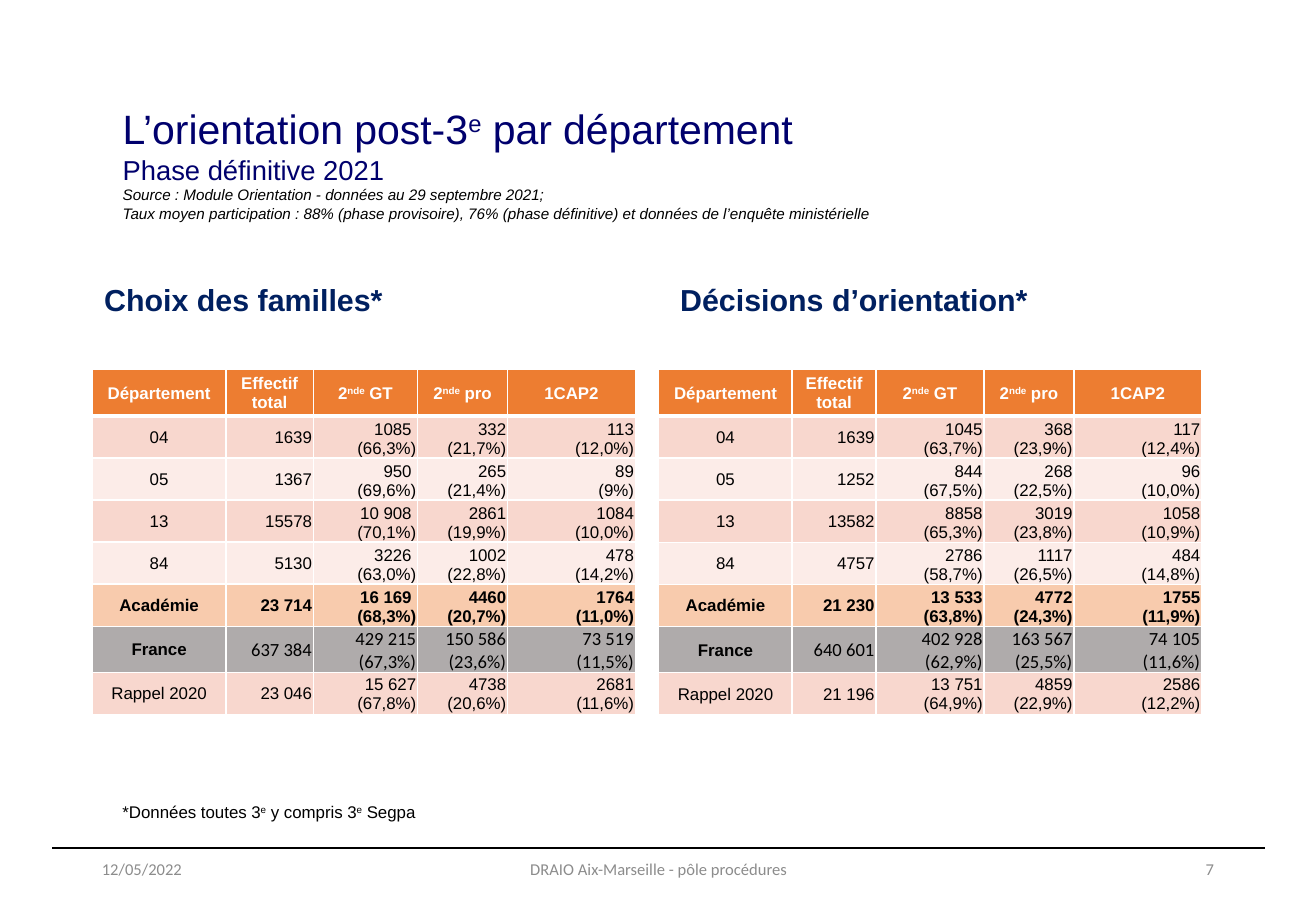
from copy import deepcopy
from lxml.etree import SubElement
from pptx import Presentation
from pptx.dml.color import RGBColor
from pptx.enum.shapes import MSO_CONNECTOR
from pptx.enum.text import MSO_ANCHOR, MSO_AUTO_SIZE, PP_ALIGN
from pptx.oxml.ns import qn
from pptx.util import Cm, Pt

NAVY = RGBColor(0x00, 0x00, 0x6D)
HEADING_BLUE = RGBColor(0x00, 0x20, 0x60)
BLACK = RGBColor(0x00, 0x00, 0x00)
WHITE = RGBColor(0xFF, 0xFF, 0xFF)
FOOTER_GREY = RGBColor(0x8C, 0x8C, 0x8C)
ORANGE = RGBColor(0xED, 0x7D, 0x31)
PINK = RGBColor(0xF8, 0xD7, 0xCE)
PALE_PINK = RGBColor(0xFC, 0xEC, 0xE8)
PEACH = RGBColor(0xF8, 0xCB, 0xAD)
GREY = RGBColor(0xAF, 0xAB, 0xAB)

ROW_FILLS = [ORANGE, PINK, PALE_PINK, PINK, PALE_PINK, PEACH, GREY, PINK]
HEADER_ROW, ACADEMY_ROW, FRANCE_ROW = 0, 5, 6
HEADER = ["Département", "Effectif total", "2^nde^ GT", "2^nde^ pro", "1CAP2"]

FAMILY_CHOICES = [
    HEADER,
    ["04", "1639", "1085 \n(66,3%)", "332 (21,7%)", "113\n(12,0%)"],
    ["05", "1367", "950 \n(69,6%)", "265 (21,4%)", "89\n(9%)"],
    ["13", "15578", "10 908 \n(70,1%)", "2861\n(19,9%)", "1084\n(10,0%)"],
    ["84", "5130", "3226 \n(63,0%)", "1002\n(22,8%)", "478\n(14,2%)"],
    ["Académie", "23 714", "16 169 \n(68,3%)", "4460\n(20,7%)", "1764\n(11,0%)"],
    ["France", "637 384", "429 215\n(67,3%)", "150 586\n(23,6%)", "73 519\n(11,5%)"],
    ["Rappel 2020", "23 046", "15 627\n(67,8%)", "4738\n(20,6%)", "2681\n(11,6%)"],
]
DECISIONS = [
    HEADER,
    ["04", "1639", "1045\n(63,7%)", "368\n(23,9%)", "117\n(12,4%)"],
    ["05", "1252", "844\n(67,5%)", "268\n(22,5%)", "96\n(10,0%)"],
    ["13", "13582", "8858\n(65,3%)", "3019\n(23,8%)", "1058\n(10,9%)"],
    ["84", "4757", "2786\n(58,7%)", "1117\n(26,5%)", "484\n(14,8%)"],
    ["Académie", "21 230", "13 533\n(63,8%)", "4772\n(24,3%)", "1755\n(11,9%)"],
    ["France", "640 601", "402 928\n(62,9%)", "163 567\n(25,5%)", "74 105\n(11,6%)"],
    ["Rappel 2020", "21 196", "13 751\n(64,9%)", "4859\n(22,9%)", "2586\n(12,2%)"],
]


def write(para, text, size, color, name="Arial", bold=False, italic=False):
    for index, piece in enumerate(text.split("^")):
        span = para.add_run()
        span.text = piece
        font = span.font
        font.name, font.size = name, Pt(size)
        font.bold, font.italic = bold, italic
        font.color.rgb = color
        if index % 2:
            font._element.set("baseline", "30000")
    return span


def add_text(page, left, top, width, height, text, size, color,
             align=PP_ALIGN.LEFT, anchor=MSO_ANCHOR.MIDDLE, **style):
    box = page.shapes.add_textbox(Cm(left), Cm(top), Cm(width), Cm(height))
    frame = box.text_frame
    frame.word_wrap = True
    frame.vertical_anchor = anchor
    para = frame.paragraphs[0]
    para.alignment = align
    write(para, text, size, color, **style)
    return box


def add_title(page, left, top, width, height):
    title = page.shapes.title
    title.left, title.top = Cm(left), Cm(top)
    title.width, title.height = Cm(width), Cm(height)
    frame = title.text_frame
    frame.auto_size = MSO_AUTO_SIZE.NONE
    frame.vertical_anchor = MSO_ANCHOR.MIDDLE
    para = frame.paragraphs[0]
    para.alignment = PP_ALIGN.LEFT
    lines = [
        ("L’orientation post-3^e^ par département", 24.3, NAVY, False),
        ("Phase définitive 2021 ", 16.2, NAVY, False),
        ("Source : Module Orientation - données au 29 septembre 2021; ", 9, BLACK, True),
        ("Taux moyen participation : 88% (phase provisoire), 76% (phase définitive) "
         "et données de l’enquête ministérielle", 9, BLACK, True),
    ]
    for index, (text, size, color, italic) in enumerate(lines):
        if index:
            para.add_line_break()
            para._p[-1].append(deepcopy(span._r.rPr))
        span = write(para, text, size, color, italic=italic)


def set_borders(cell, bottom):
    properties = cell._tc.get_or_add_tcPr()
    for side, points in (("lnL", 1), ("lnR", 1), ("lnT", 1), ("lnB", bottom)):
        line = SubElement(properties, qn(f"a:{side}"), w=str(Pt(points)))
        fill = SubElement(line, qn("a:solidFill"))
        SubElement(fill, qn("a:srgbClr"), val=str(WHITE))


def fill_cell(cell, text, row, column):
    is_header = row == HEADER_ROW
    is_france_value = row == FRANCE_ROW and column > 0
    set_borders(cell, 3 if is_header else 1)
    cell.fill.solid()
    cell.fill.fore_color.rgb = ROW_FILLS[row]
    cell.margin_left = cell.margin_right = cell.margin_top = Cm(0.03)
    cell.margin_bottom = 0
    at_bottom = HEADER_ROW < row < FRANCE_ROW and column > 1
    cell.vertical_anchor = MSO_ANCHOR.BOTTOM if at_bottom else MSO_ANCHOR.MIDDLE
    frame = cell.text_frame
    for index, line in enumerate(text.split("\n")):
        para = frame.add_paragraph() if index else frame.paragraphs[0]
        para.alignment = PP_ALIGN.CENTER if is_header or column == 0 else PP_ALIGN.RIGHT
        write(para, line, 11 if is_france_value else 10,
              WHITE if is_header else BLACK,
              name="Calibri" if is_france_value else "Arial",
              bold=row in (HEADER_ROW, ACADEMY_ROW, FRANCE_ROW) and not is_france_value)


def add_orientation_table(page, left, top, column_widths, row_height, rows):
    heights = [row_height] * len(rows)
    heights[HEADER_ROW], heights[FRANCE_ROW] = 0.98, 0.95
    table = page.shapes.add_table(len(rows), len(column_widths), Cm(left), Cm(top),
                                  Cm(sum(column_widths)), Cm(sum(heights))).table
    for column, width in zip(table.columns, column_widths):
        column.width = Cm(width)
    for row, (values, height) in enumerate(zip(rows, heights)):
        table.rows[row].height = Cm(height)
        for column, text in enumerate(values):
            fill_cell(table.cell(row, column), text, row, column)


def add_heading(page, left, top, width, text):
    box = add_text(page, left, top, width, 2.29, text, 18, HEADING_BLUE,
                   anchor=MSO_ANCHOR.BOTTOM, bold=True)
    box.text_frame.margin_bottom = Cm(1.07)
    box.text_frame.paragraphs[0].line_spacing = 0.9


def add_footer(page, left, top, width):
    rule = page.shapes.add_connector(MSO_CONNECTOR.STRAIGHT, Cm(left), Cm(top),
                                     Cm(left + width), Cm(top))
    rule.line.color.rgb = BLACK
    rule.line.width = Pt(0.8)
    SubElement(rule._element.spPr, qn("a:effectLst"))
    for offset, part_width, text, align in (
            (0.79, 6.2, "12/05/2022", PP_ALIGN.LEFT),
            (8.03, 9.3, "DRAIO Aix-Marseille - pôle procédures", PP_ALIGN.CENTER),
            (18.34, 6.2, "7", PP_ALIGN.RIGHT)):
        add_text(page, left + offset, top - 0.08, part_width, 1.02, text, 9.8,
                 FOOTER_GREY, align=align, name="Calibri")


def main():
    deck = Presentation()
    deck.slide_width, deck.slide_height = Cm(27.51), Cm(19.05)
    page = deck.slides.add_slide(deck.slide_layouts[5])
    add_title(page, 2.31, 2.26, 22.48, 2.29)
    add_heading(page, 1.93, 5.44, 11.33, "Choix des familles*")
    add_heading(page, 13.97, 5.44, 11, "Décisions d’orientation*")
    add_orientation_table(page, 1.93, 7.72, [2.79, 1.83, 2.18, 1.88, 2.67], 0.81, FAMILY_CHOICES)
    add_orientation_table(page, 13.77, 7.72, [2.79, 1.75, 2.26, 1.88, 2.67], 0.88, DECISIONS)
    note = add_text(page, 2.31, 16.64, 6.73, 0.69, "*Données toutes 3^e^ y compris 3^e^ Segpa",
                    10, BLACK, anchor=MSO_ANCHOR.TOP)
    note.text_frame.word_wrap = False
    add_footer(page, 1.09, 17.73, 25.35)
    deck.save("out.pptx")


if __name__ == "__main__":
    main()
